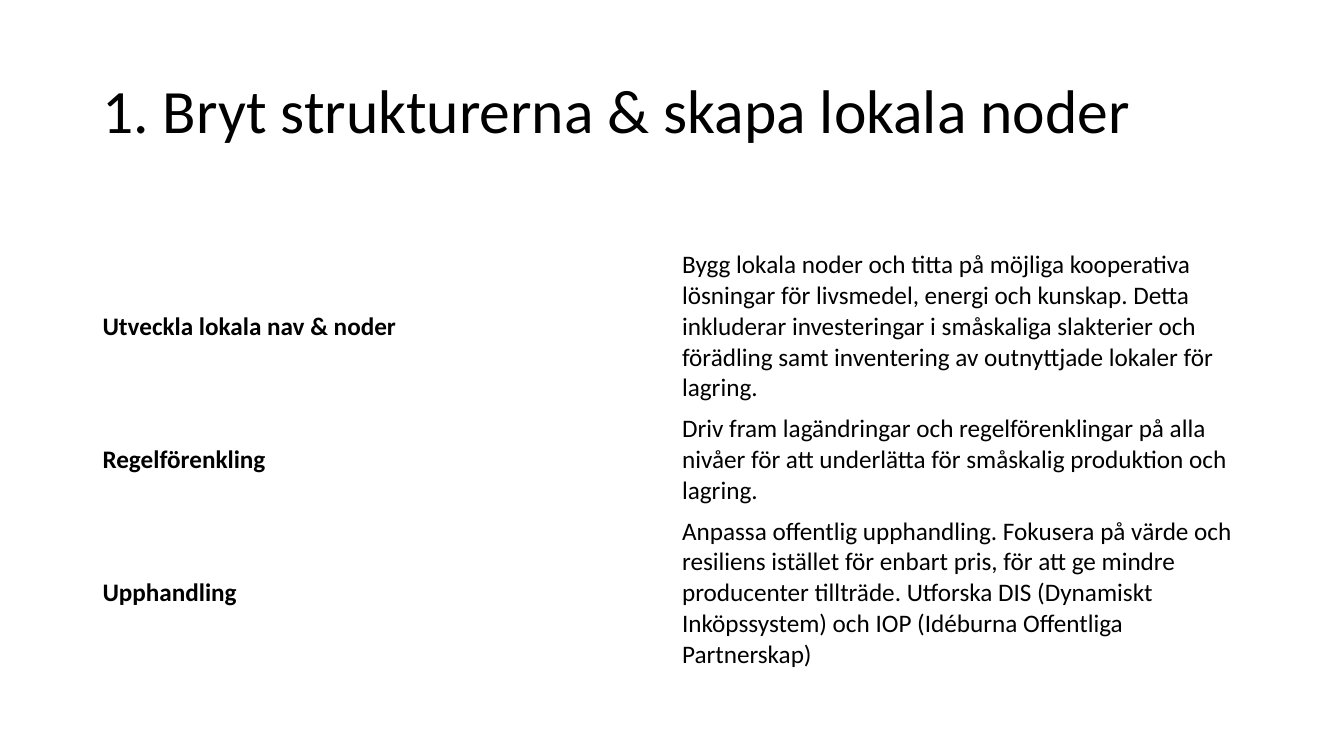
from typing import NamedTuple

from pptx import Presentation
from pptx.dml.color import RGBColor
from pptx.enum.text import MSO_ANCHOR
from pptx.slide import Slide
from pptx.table import _Cell
from pptx.text.text import _Paragraph
from pptx.util import Cm, Pt

BLACK = RGBColor(0x00, 0x00, 0x00)
FONT = "Calibri"
LEFT, WIDTH = Cm(2.33), Cm(29.21)


class Step(NamedTuple):
    name: str
    text: str
    height: float


STEPS = [
    Step("Utveckla lokala nav & noder",
         "Bygg lokala noder och titta på möjliga kooperativa lösningar för "
         "livsmedel, energi och kunskap. Detta inkluderar investeringar i "
         "småskaliga slakterier och förädling samt inventering av outnyttjade "
         "lokaler för lagring.", 4.13),
    Step("Regelförenkling",
         "Driv fram lagändringar och regelförenklingar på alla nivåer för att "
         "underlätta för småskalig produktion och lagring.", 2.58),
    Step("Upphandling",
         "Anpassa offentlig upphandling. Fokusera på värde och resiliens "
         "istället för enbart pris, för att ge mindre producenter tillträde. "
         "Utforska DIS (Dynamiskt Inköpssystem) och IOP (Idéburna Offentliga "
         "Partnerskap)", 4.13),
]


def write(para: _Paragraph, text: str, size: int, bold: bool = False) -> None:
    para.text = text
    font = para.font
    font.name, font.size, font.bold = FONT, Pt(size), bold
    font.color.rgb = BLACK


def add_title(slide: Slide, text: str) -> None:
    frame = slide.shapes.add_textbox(LEFT, Cm(1.01), WIDTH, Cm(3.68)).text_frame
    frame.word_wrap = True
    frame.vertical_anchor = MSO_ANCHOR.MIDDLE
    para = frame.paragraphs[0]
    para.line_spacing = 0.9
    write(para, text, 44)


def fill_cell(cell: _Cell, text: str, bold: bool) -> None:
    cell.fill.background()
    cell.vertical_anchor = MSO_ANCHOR.MIDDLE
    write(cell.text_frame.paragraphs[0], text, 18, bold)


def add_steps(slide: Slide, steps: list[Step]) -> None:
    height = Cm(sum(step.height for step in steps))
    table = slide.shapes.add_table(
        len(steps), 2, LEFT, Cm(6.17), WIDTH, height).table
    table.first_row = table.horz_banding = False
    for row, step in zip(table.rows, steps):
        row.height = Cm(step.height)
        fill_cell(row.cells[0], step.name, True)
        fill_cell(row.cells[1], step.text, False)


def main() -> None:
    deck = Presentation()
    deck.slide_width, deck.slide_height = Cm(33.87), Cm(19.05)
    slide = deck.slides.add_slide(deck.slide_layouts[6])
    add_title(slide, "1. Bryt strukturerna & skapa lokala noder")
    add_steps(slide, STEPS)
    deck.save("out.pptx")


if __name__ == "__main__":
    main()
